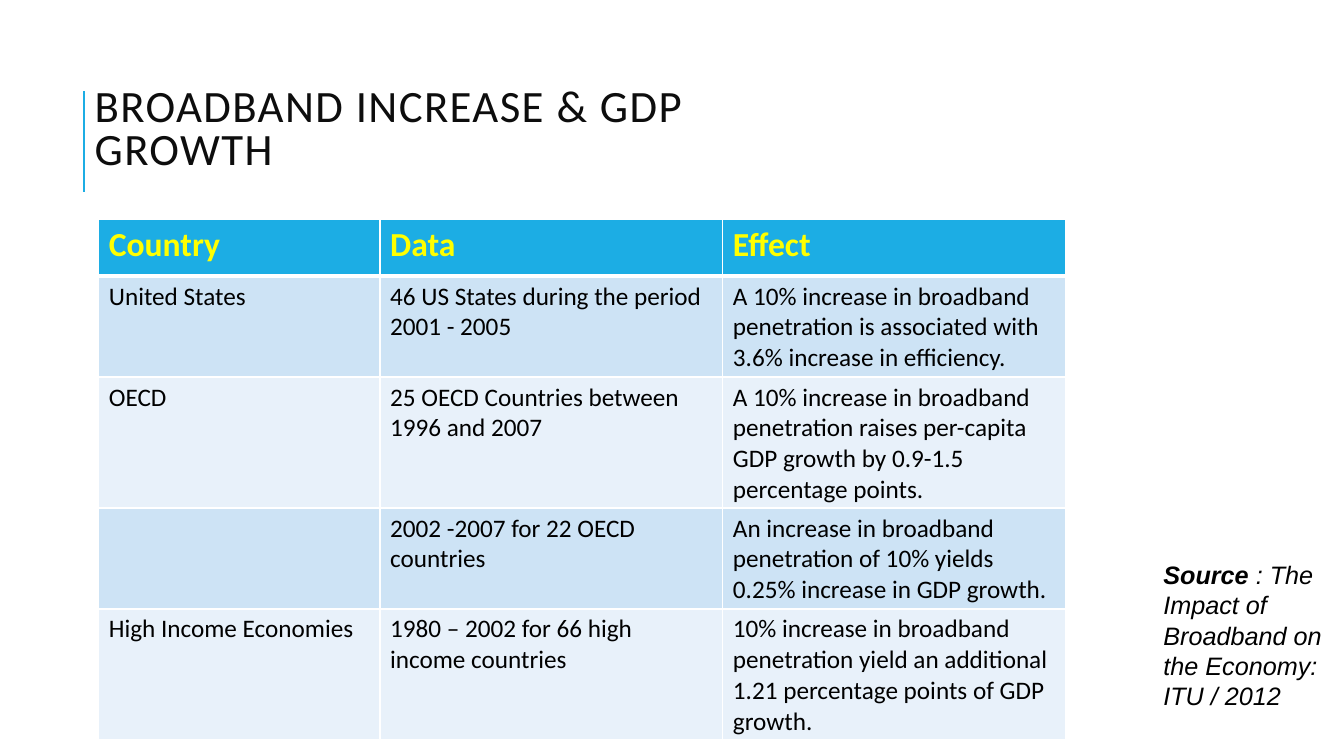
"""Builds a slide with a table of broadband increase and GDP growth."""
from lxml import etree
from pptx import Presentation
from pptx.dml.color import RGBColor
from pptx.enum.shapes import MSO_CONNECTOR
from pptx.enum.text import MSO_ANCHOR, MSO_AUTO_SIZE
from pptx.oxml.ns import qn
from pptx.util import Inches, Pt


def color(value):
    return RGBColor.from_string(value)


def add_run(paragraph, text, size, font_name, hex_color, **styles):
    run = paragraph.add_run()
    run.text = text
    run.font.color.rgb = color(hex_color)
    formats = {"size": Pt(size), "name": font_name, **styles}
    for attribute, value in formats.items():
        setattr(run.font, attribute, value)
    return run


presentation = Presentation()
presentation.slide_width = Inches(13.33)
presentation.slide_height = Inches(7.5)
slide = presentation.slides.add_slide(presentation.slide_layouts[6])

accent = slide.shapes.add_connector(
    MSO_CONNECTOR.STRAIGHT, Inches(0.83), Inches(1.9), Inches(0.83), Inches(0.9))
accent.line.color.rgb = color("1CADE4")
accent.line.width = Pt(1.5)
etree.SubElement(accent.element.spPr, qn("a:effectLst"))

title = slide.shapes.add_textbox(
    Inches(0.84), Inches(0.43), Inches(6.3), Inches(1.75)).text_frame
title.word_wrap = True
title.vertical_anchor = MSO_ANCHOR.MIDDLE
title.paragraphs[0].line_spacing = 0.8
heading = add_run(title.paragraphs[0], "BROADBAND INCREASE & GDP GROWTH",
                  32, "Calibri", "0D0D0D")
heading.font._element.set("spc", "100")

findings = [
    ("Country", "Data", "Effect"),
    ("United States", "46 US States during the period 2001 - 2005",
     "A 10% increase in broadband penetration is associated with 3.6% increase in efficiency."),
    ("OECD", "25 OECD Countries between 1996 and 2007",
     "A 10% increase in broadband penetration raises per-capita GDP growth by 0.9-1.5 percentage points."),
    ("", "2002 -2007 for 22 OECD countries",
     "An increase in broadband penetration of 10% yields 0.25% increase in GDP growth."),
    ("High Income Economies", "1980 – 2002 for 66 high income countries",
     "10% increase in broadband penetration yield an additional 1.21 percentage points of GDP growth."),
]
column_widths = [2.79, 3.4, 3.4]
row_heights = [0.56, 0.66, 0.93, 0.66, 0.93]
table = slide.shapes.add_table(
    len(findings), len(column_widths), Inches(0.98), Inches(2.18),
    Inches(sum(column_widths)), Inches(sum(row_heights))).table
for column, width in zip(table.columns, column_widths):
    column.width = Inches(width)

for row_index, (finding, height) in enumerate(zip(findings, row_heights)):
    table.rows[row_index].height = Inches(height)
    is_header = row_index == 0
    band = "1CADE4" if is_header else ("E8F1FA", "CDE3F5")[row_index % 2]
    size, text_color = (24, "FFFF00") if is_header else (18, "000000")
    for column_index, text in enumerate(finding):
        cell = table.cell(row_index, column_index)
        cell.fill.solid()
        cell.fill.fore_color.rgb = color(band)
        if text:
            add_run(cell.text_frame.paragraphs[0], text, size, "Calibri",
                    text_color, bold=is_header)
        border_widths = {"a:lnL": 1, "a:lnR": 1,
                         "a:lnT": 3 if row_index == 1 else 1,
                         "a:lnB": 3 if is_header else 1}
        properties = cell._tc.get_or_add_tcPr()
        for position, (side, width) in enumerate(border_widths.items()):
            border = etree.Element(qn(side), w=str(Pt(width)))
            border_fill = etree.SubElement(border, qn("a:solidFill"))
            etree.SubElement(border_fill, qn("a:srgbClr"), val="FFFFFF")
            properties.insert(position, border)

source = slide.shapes.add_textbox(
    Inches(11.44), Inches(5.5), Inches(2), Inches(1.62)).text_frame
source.word_wrap = True
source.auto_size = MSO_AUTO_SIZE.SHAPE_TO_FIT_TEXT
for text, bold in [("Source ", True),
                   (": The Impact of Broadband on the Economy: ITU / 2012", False)]:
    add_run(source.paragraphs[0], text, 18, "Arial", "000000", bold=bold, italic=True)

presentation.save("out.pptx")
